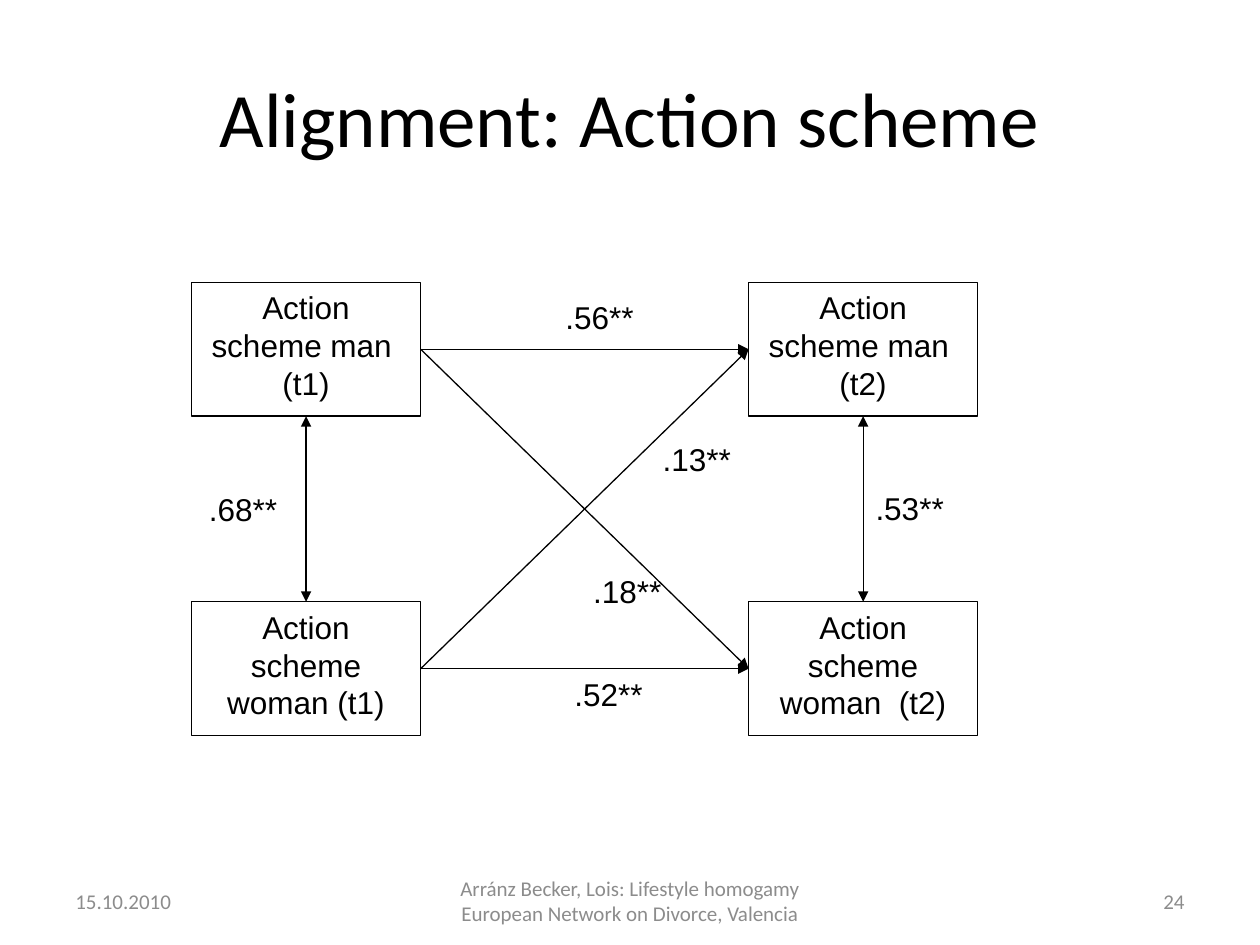
from lxml.etree import SubElement
from pptx import Presentation
from pptx.dml.color import RGBColor
from pptx.enum.shapes import MSO_CONNECTOR, MSO_SHAPE
from pptx.enum.text import MSO_ANCHOR as Anchor, PP_ALIGN as Align
from pptx.oxml.ns import qn
from pptx.util import Cm, Pt

BLACK = RGBColor(0x00, 0x00, 0x00)
WHITE = RGBColor(0xFF, 0xFF, 0xFF)
GRAY = RGBColor(0x8C, 0x8C, 0x8C)
NODE_WIDTH, NODE_HEIGHT = 4.62, 2.7
TOP, LEFT, BOTTOM, RIGHT = range(4)

NODES = {
    "man1": ("Action scheme man  (t1)", 0, 0),
    "man2": ("Action scheme man  (t2)", 1, 0),
    "woman1": ("Action scheme woman (t1)", 0, 1),
    "woman2": ("Action scheme woman  (t2)", 1, 1),
}
PATHS = [
    ("man1", RIGHT, "man2", LEFT),
    ("woman1", RIGHT, "woman2", LEFT),
    ("man1", RIGHT, "woman2", LEFT),
    ("woman1", RIGHT, "man2", LEFT),
    ("man1", BOTTOM, "woman1", TOP),
    ("man2", BOTTOM, "woman2", TOP),
]
COEFFICIENTS = [
    (".53**", 13.54, 4.04, 2.44),
    (".56**", 7.29, 0.2, 2.16),
    (".52**", 7.47, 7.8, 1.96),
    (".18**", 7.85, 5.72, 2.26),
    (".13**", 9.25, 3.05, 2.18),
    (".68**", 0.1, 4.06, 2.79),
]


def write(shape, text, font, size, color, align, anchor):
    """Fill a shape with one wrapped paragraph of formatted text."""
    frame = shape.text_frame
    frame.text = text
    frame.word_wrap = True
    frame.vertical_anchor = anchor
    paragraph = frame.paragraphs[0]
    paragraph.alignment = align
    run_font = paragraph.runs[0].font
    run_font.name = font
    run_font.size = Pt(size)
    run_font.color.rgb = color


def add_label(slide, box, text, font, size, color=BLACK, align=Align.LEFT, anchor=Anchor.MIDDLE):
    """Place a text box in a box given in centimetres."""
    label = slide.shapes.add_textbox(*map(Cm, box))
    write(label, text, font, size, color, align, anchor)


def add_node(slide, text, left, top):
    """Draw one outlined variable of the path model."""
    node = slide.shapes.add_shape(
        MSO_SHAPE.RECTANGLE, Cm(left), Cm(top), Cm(NODE_WIDTH), Cm(NODE_HEIGHT))
    node.shadow.inherit = False
    node.fill.solid()
    node.fill.fore_color.rgb = WHITE
    node.line.color.rgb = BLACK
    node.line.width = Pt(0.75)
    write(node, text, "Arial", 18, BLACK, Align.CENTER, Anchor.TOP)
    return node


def add_path(slide, source, source_side, target, target_side):
    """Join two variables, with heads at both ends for a correlation."""
    path = slide.shapes.add_connector(MSO_CONNECTOR.STRAIGHT, 0, 0, 0, 0)
    path.begin_connect(source, source_side)
    path.end_connect(target, target_side)
    path.line.color.rgb = BLACK
    path.line.width = Pt(0.75)
    properties = path._element.spPr
    outline = properties.find(qn("a:ln"))
    if source_side == BOTTOM:
        SubElement(outline, qn("a:headEnd"), type="triangle")
    SubElement(outline, qn("a:tailEnd"), type="triangle")
    SubElement(properties, qn("a:effectLst"))


def add_path_model(slide, left, top, width, height):
    """Draw the variables, paths and coefficients inside the given box."""
    nodes = {
        key: add_node(slide, text, left + column * (width - NODE_WIDTH),
                      top + row * (height - NODE_HEIGHT))
        for key, (text, column, row) in NODES.items()
    }
    for source, source_side, target, target_side in PATHS:
        add_path(slide, nodes[source], source_side, nodes[target], target_side)
    for text, x, y, label_width in COEFFICIENTS:
        add_label(slide, (left + x, top + y, label_width, 1.02), text, "Arial", 18,
                  anchor=Anchor.TOP)


def add_footer(slide, left, top, width, height):
    """Set date, source and page number along the given strip."""
    side, middle = 5.93, 8.04
    entries = [
        ("15.10.2010", 0, side, Align.LEFT),
        ("Arránz Becker, Lois: Lifestyle homogamy European Network on Divorce, Valencia",
         (width - middle) / 2, middle, Align.CENTER),
        ("24", width - side, side, Align.RIGHT),
    ]
    for text, x, entry_width, align in entries:
        add_label(slide, (left + x, top, entry_width, height), text, "Calibri", 12, GRAY, align)


def main():
    """Build and save the slide."""
    deck = Presentation()
    deck.slide_width, deck.slide_height = Cm(25.4), Cm(19.05)
    slide = deck.slides.add_slide(deck.slide_layouts[6])
    add_label(slide, (1.27, 0.76, 22.86, 3.18), "Alignment: Action scheme", "Calibri", 44,
              align=Align.CENTER)
    add_path_model(slide, 3.86, 5.69, 15.85, 9.14)
    add_footer(slide, 1.27, 17.65, 22.86, 1.02)
    deck.save("out.pptx")


if __name__ == "__main__":
    main()
